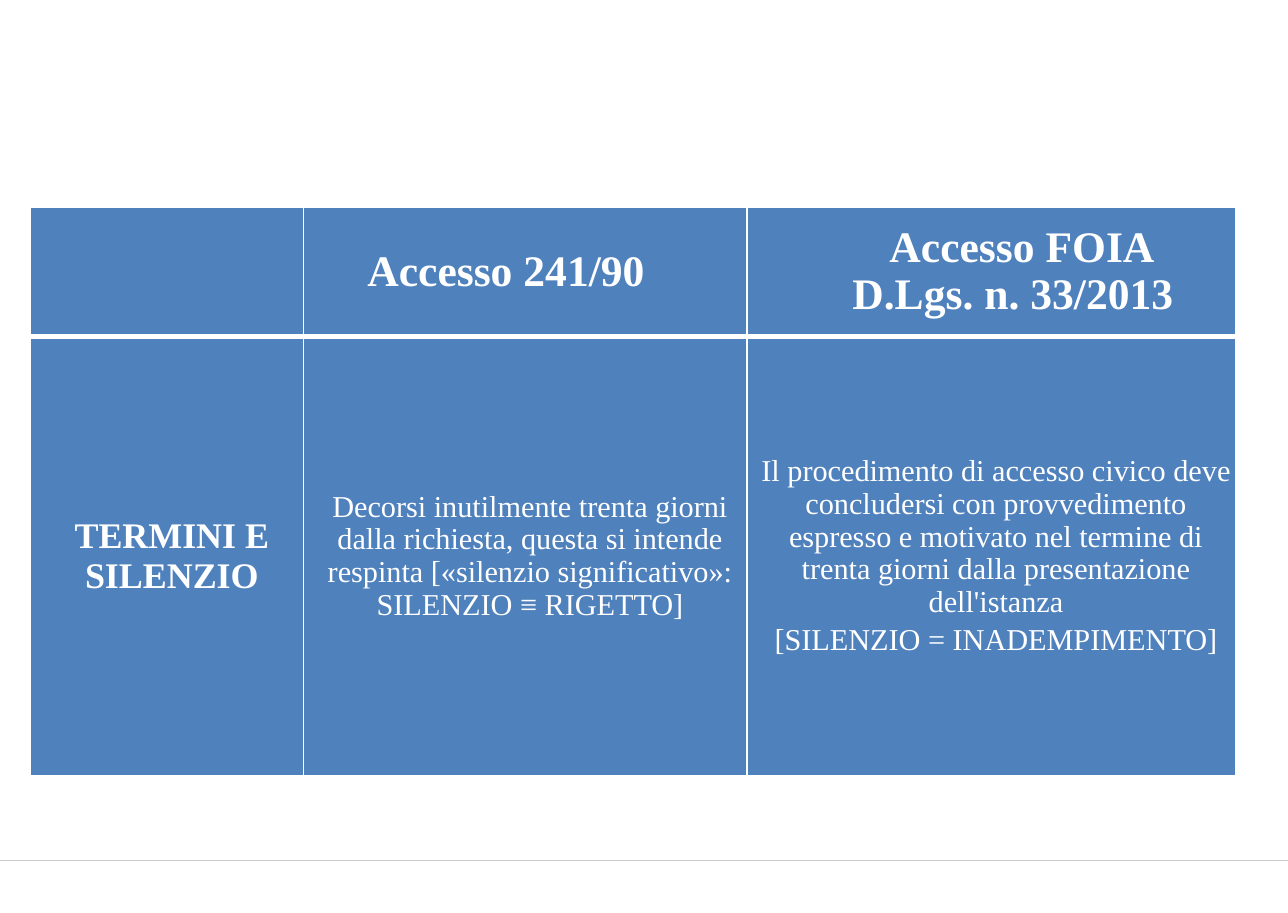
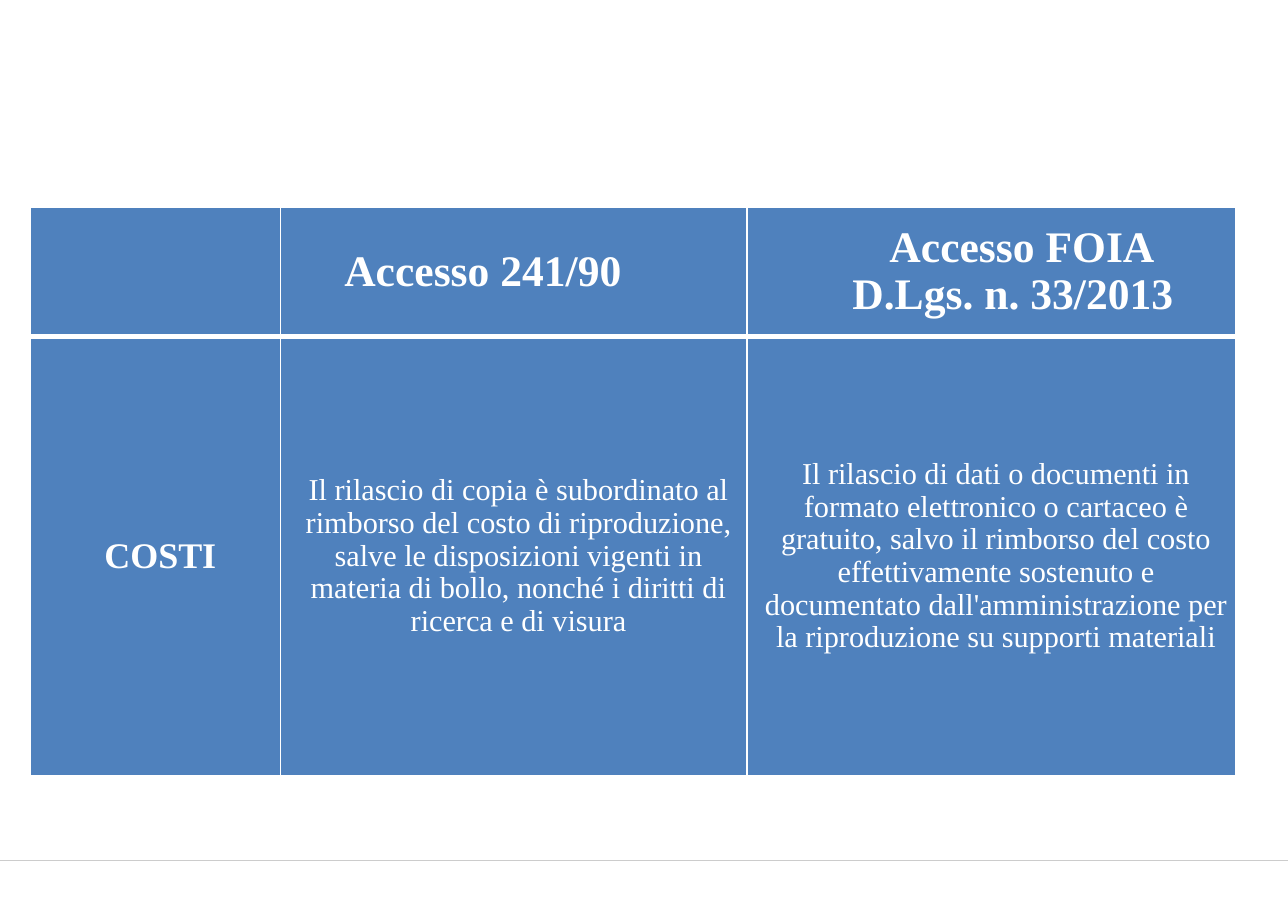
from lxml import etree
from pptx import Presentation
from pptx.dml.color import RGBColor
from pptx.enum.shapes import MSO_CONNECTOR
from pptx.enum.text import MSO_ANCHOR, PP_ALIGN
from pptx.oxml.ns import qn
from pptx.util import Cm, Pt

BLUE = RGBColor(0x4F, 0x81, 0xBD)
WHITE = RGBColor(0xFF, 0xFF, 0xFF)
GREY = RGBColor(0xCC, 0xCC, 0xCC)
FONT = "Times New Roman"

# Content: column headings, then one topic per slide
HEADINGS = ("Accesso 241/90", "Accesso FOIA D.Lgs. n. 33/2013")
TOPICS = [
    {
        "label": "TERMINI E SILENZIO",
        "label_width": 5.08,
        "access_241": [
            "Decorsi inutilmente trenta giorni dalla richiesta, questa si intende "
            "respinta [«silenzio significativo»: SILENZIO ≡ RIGETTO]",
        ],
        "access_foia": [
            "Il procedimento di accesso civico deve concludersi con provvedimento "
            "espresso e motivato nel termine di trenta giorni dalla presentazione "
            "dell'istanza",
            "[SILENZIO = INADEMPIMENTO]",
        ],
    },
    {
        "label": "COSTI",
        "label_width": 4.65,
        "access_241": [
            "Il rilascio di copia è subordinato al rimborso del costo di "
            "riproduzione, salve le disposizioni vigenti in materia di bollo, "
            "nonché i diritti di ricerca e di visura",
        ],
        "access_foia": [
            "Il rilascio di dati o documenti in formato elettronico o cartaceo è "
            "gratuito, salvo il rimborso del costo effettivamente sostenuto e "
            "documentato dall'amministrazione per la riproduzione su supporti "
            "materiali",
        ],
    },
]

# Layout in centimetres
SLIDE_W, SLIDE_H = 23.98, 16.99
TABLE_LEFT, TABLE_TOP, TABLE_W = 0.57, 3.85, 22.43
FOIA_W = 9.09
ROW_HEIGHTS = (2.41, 8.18)
FOOTER_Y = 16

# Text styles: size, bold, alignment, left margin, first-line indent, line spacing
HEAD_241 = (23, True, PP_ALIGN.LEFT, 1.19, 0, 1)
HEAD_FOIA = (23, True, PP_ALIGN.LEFT, 1.96, 0.69, 0.97)
LABEL = (19, True, PP_ALIGN.CENTER, 0.18, 0, 1)
BODY = (16, False, PP_ALIGN.CENTER, 0.18, 0, 0.97)


def add_footer_line(slide):
    line = slide.shapes.add_connector(
        MSO_CONNECTOR.STRAIGHT, 0, Cm(FOOTER_Y), Cm(SLIDE_W), Cm(FOOTER_Y))
    line.line.color.rgb = GREY
    line.line.width = Pt(0.25)
    etree.SubElement(line._element.spPr, qn("a:effectLst"))


def set_borders(cell, top, bottom):
    properties = cell._tc.get_or_add_tcPr()
    sides = (("L", 1), ("R", 1), ("T", top), ("B", bottom))
    for position, (side, width) in enumerate(sides):
        border = etree.Element(qn(f"a:ln{side}"), w=str(Pt(width)))
        fill = etree.SubElement(border, qn("a:solidFill"))
        etree.SubElement(fill, qn("a:srgbClr"), val=str(WHITE))
        properties.insert(position, border)


def write(cell, paragraphs, style):
    size, bold, alignment, margin, indent, spacing = style
    cell.text = "\n".join(paragraphs)
    for number, paragraph in enumerate(cell.text_frame.paragraphs):
        layout = paragraph._p.get_or_add_pPr()
        layout.set("marL", str(Cm(margin)))
        layout.set("indent", str(Cm(indent)))
        paragraph.alignment = alignment
        paragraph.line_spacing = spacing
        paragraph.space_before = Pt(2.5 if number else 0)
        font = paragraph.font
        font.name, font.size, font.bold = FONT, Pt(size), bold
        font.color.rgb = WHITE


def add_comparison(slide, topic):
    label_w = topic["label_width"]
    widths = (label_w, TABLE_W - label_w - FOIA_W, FOIA_W)
    table = slide.shapes.add_table(
        len(ROW_HEIGHTS), len(widths), Cm(TABLE_LEFT), Cm(TABLE_TOP),
        Cm(TABLE_W), Cm(sum(ROW_HEIGHTS))).table
    for column, width in zip(table.columns, widths):
        column.width = Cm(width)

    rows = [
        [None, ([HEADINGS[0]], HEAD_241), ([HEADINGS[1]], HEAD_FOIA)],
        [([topic["label"]], LABEL), (topic["access_241"], BODY),
         (topic["access_foia"], BODY)],
    ]
    for r, entries in enumerate(rows):
        table.rows[r].height = Cm(ROW_HEIGHTS[r])
        for c, entry in enumerate(entries):
            cell = table.cell(r, c)
            cell.margin_left = cell.margin_right = 0
            cell.margin_top = cell.margin_bottom = 0
            cell.vertical_anchor = MSO_ANCHOR.MIDDLE
            cell.fill.solid()
            cell.fill.fore_color.rgb = BLUE
            # Thick rule between heading and body
            set_borders(cell, *((1, 3) if r == 0 else (3, 1)))
            if entry:
                write(cell, *entry)


def main():
    deck = Presentation()
    deck.slide_width, deck.slide_height = Cm(SLIDE_W), Cm(SLIDE_H)
    for topic in TOPICS:
        slide = deck.slides.add_slide(deck.slide_layouts[6])
        add_footer_line(slide)
        add_comparison(slide, topic)
    deck.save("out.pptx")


if __name__ == "__main__":
    main()
